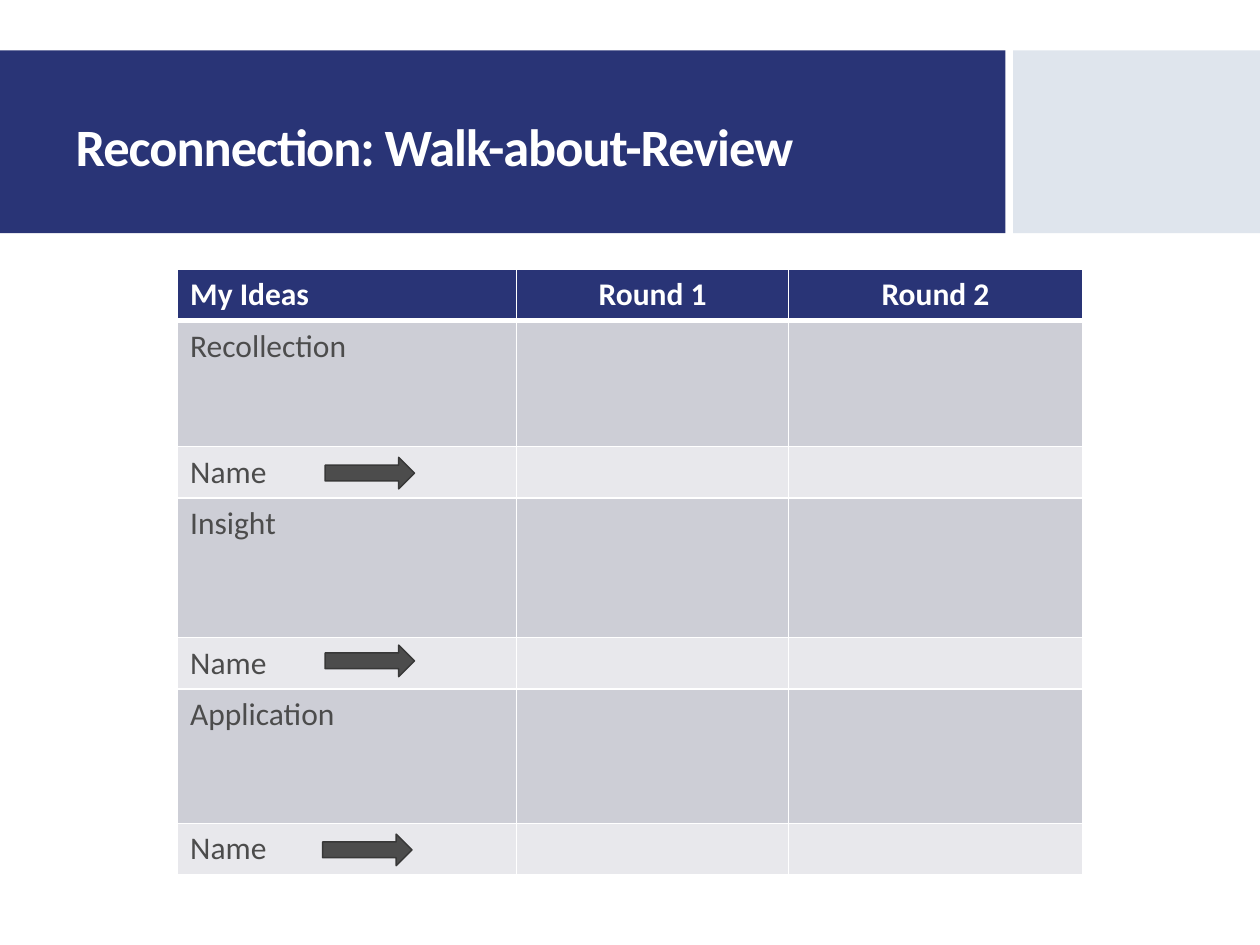
from lxml.etree import SubElement
from pptx import Presentation
from pptx.dml.color import RGBColor
from pptx.enum.shapes import MSO_SHAPE
from pptx.enum.text import MSO_ANCHOR, PP_ALIGN
from pptx.oxml.ns import qn
from pptx.util import Inches, Pt

COLORS = {"navy": "293476", "pale": "DFE5ED", "white": "FFFFFF", "text": "4C4C4C",
          "edge": "383838", "band": "CDCED6", "light": "E8E8EC"}
C = {name: RGBColor.from_string(value) for name, value in COLORS.items()}

prs = Presentation()
prs.slide_width, prs.slide_height = Inches(10), Inches(7.5)
s = prs.slides.add_slide(prs.slide_layouts[5])


def add_shape(kind, left, top, width, height, fill, line=None):
    sp = s.shapes.add_shape(kind, *map(Inches, (left, top, width, height)))
    sp.shadow.inherit = False
    sp.fill.solid()
    sp.fill.fore_color.rgb = C[fill]
    if line:
        sp.line.color.rgb = C[line]
        sp.line.width = Pt(0.85)
    else:
        sp.line.fill.background()


def set_borders(cell, widths):
    tcPr = cell._tc.get_or_add_tcPr()
    for i, (side, width) in enumerate(widths.items()):
        ln = SubElement(tcPr, qn(f"a:ln{side}"), w=str(Pt(width)))
        SubElement(SubElement(ln, qn("a:solidFill")), qn("a:srgbClr"), val=COLORS["white"])
        tcPr.insert(i, ln)  # borders come before the fill


# Header bands
for left, width, fill in ((0, 7.98, "navy"), (8.04, 1.96, "pale")):
    add_shape(MSO_SHAPE.RECTANGLE, left, 0.4, width, 1.45, fill)

# Title, brought in front of the bands
title = s.shapes.title
s.shapes._spTree.append(title._element)
for name, value in {"left": 0.5, "top": 0.58, "width": 6.93, "height": 1.22}.items():
    setattr(title, name, Inches(value))
tf = title.text_frame
tf.text = "Reconnection: Walk-about-Review"
tf.word_wrap = True
tf.vertical_anchor = MSO_ANCHOR.MIDDLE
p = tf.paragraphs[0]
p.alignment = PP_ALIGN.LEFT
p.line_spacing = 0.9
r = p.runs[0]
for name, value in {"name": "Calibri", "size": Pt(30), "bold": True}.items():
    setattr(r.font, name, value)
r.font.color.rgb = C["white"]
r.font._element.set("spc", "-60")

# Review table: a header, then a tall topic row and a short name row for each topic
rows = [("My Ideas", "Round 1", "Round 2")]
for topic in ("Recollection", "Insight", "Application"):
    rows += [(topic, "", ""), ("Name", "", "")]
col_widths = (2.69, 2.16, 2.33)
row_heights = (0.4, 1, 0.4, 1.11, 0.4, 1.07, 0.4)
table = s.shapes.add_table(len(rows), len(col_widths), Inches(1.41), Inches(2.14),
                           Inches(sum(col_widths)), Inches(sum(row_heights))).table
for col, width in zip(table.columns, col_widths):
    col.width = Inches(width)
for i, (texts, height) in enumerate(zip(rows, row_heights)):
    table.rows[i].height = Inches(height)
    header = i == 0
    fill = "navy" if header else "band" if i % 2 else "light"
    for j, text in enumerate(texts):
        cell = table.cell(i, j)
        cell.text = text
        cell.fill.solid()
        cell.fill.fore_color.rgb = C[fill]
        set_borders(cell, {"L": 1, "R": 1, "T": 3 if i == 1 else 1, "B": 3 if header else 1})
        p = cell.text_frame.paragraphs[0]
        p.alignment = PP_ALIGN.CENTER if header and j else PP_ALIGN.LEFT
        font = p.runs[0].font if text else p.font
        for name, value in {"name": "Calibri", "size": Pt(18), "bold": header}.items():
            setattr(font, name, value)
        font.color.rgb = C["white" if header else "text"]

# Arrows in the name rows
for left, top in ((2.58, 3.63), (2.58, 5.12), (2.56, 6.62)):
    add_shape(MSO_SHAPE.RIGHT_ARROW, left, top, 0.71, 0.25, "text", "edge")

prs.save("out.pptx")
